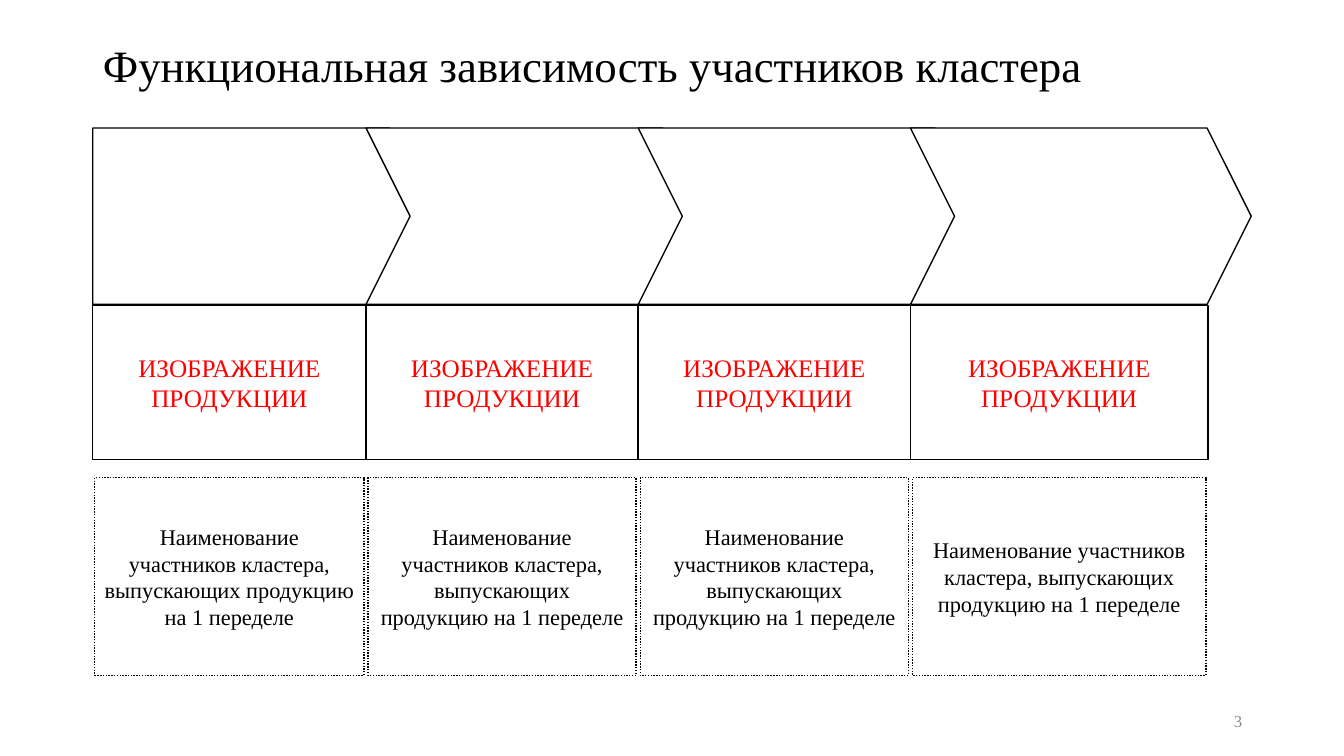
from itertools import pairwise

from pptx import Presentation
from pptx.dml.color import RGBColor
from pptx.enum.dml import MSO_LINE
from pptx.enum.shapes import MSO_SHAPE as Shape
from pptx.enum.text import MSO_ANCHOR as Anchor, MSO_AUTO_SIZE as AutoSize, PP_ALIGN as Align
from pptx.util import Inches, Pt

FONT = "Times New Roman"
BLACK, WHITE, RED, GRAY = "000000", "FFFFFF", "FF0000", "8C8C8C"
STAGE_EDGES = [0.92, 3.63, 6.33, 9.03, 11.98]
ARROW_WIDTH, ARROW_HEIGHT = 3.38, 1.75
GAP = 0.02
PRODUCT = "ИЗОБРАЖЕНИЕ ПРОДУКЦИИ"
MEMBERS = "Наименование участников кластера, выпускающих продукцию на 1 переделе"


def color(hex_value):
    return RGBColor.from_string(hex_value)


def write(holder, text, size, ink, align):
    frame = holder.text_frame
    frame.text = text
    frame.word_wrap = True
    frame.auto_size = AutoSize.NONE
    frame.vertical_anchor = Anchor.MIDDLE
    paragraph = frame.paragraphs[0]
    paragraph.alignment = align
    font = paragraph.runs[0].font
    font.name, font.size = FONT, Pt(size)
    font.color.rgb = color(ink)


def add_outlined(slide, kind, left, top, width, height, fill=None):
    outlined = slide.shapes.add_shape(
        kind, Inches(left), Inches(top), Inches(width), Inches(height))
    outlined.shadow.inherit = False
    if fill:
        outlined.fill.solid()
        outlined.fill.fore_color.rgb = color(fill)
    else:
        outlined.fill.background()
    outlined.line.color.rgb = color(BLACK)
    outlined.line.width = Pt(1)
    return outlined


def add_title(slide, text):
    title = slide.shapes.title
    title.left, title.top = Inches(0.92), Inches(0.4)
    title.width, title.height = Inches(11.5), Inches(0.55)
    write(title, text, 32, BLACK, Align.LEFT)
    title.text_frame.paragraphs[0].line_spacing = 0.9


def add_page_number(slide, number):
    page = slide.shapes.add_textbox(Inches(9.42), Inches(6.95), Inches(3), Inches(0.4))
    write(page, number, 12, GRAY, Align.RIGHT)


def add_arrow(slide, kind, left):
    arrow = add_outlined(slide, kind, left, 1.27, ARROW_WIDTH, ARROW_HEIGHT, WHITE)
    arrow.adjustments[0] = 0.25


def add_product(slide, left, width):
    product = add_outlined(slide, Shape.RECTANGLE, left, 3.03, width, 1.53)
    write(product, PRODUCT, 18, RED, Align.CENTER)


def add_members(slide, left, width):
    members = add_outlined(
        slide, Shape.RECTANGLE, left + GAP, 4.74, width - 2 * GAP, 1.96, WHITE)
    members.line.dash_style = MSO_LINE.ROUND_DOT
    write(members, MEMBERS, 16, BLACK, Align.CENTER)


def main():
    deck = Presentation()
    deck.slide_width, deck.slide_height = Inches(13.33), Inches(7.5)
    slide = deck.slides.add_slide(deck.slide_layouts[5])
    add_title(slide, "Функциональная зависимость участников кластера")
    add_page_number(slide, "3")
    for stage, (left, right) in enumerate(pairwise(STAGE_EDGES)):
        add_arrow(slide, Shape.CHEVRON if stage else Shape.PENTAGON, left)
        add_product(slide, left, right - left)
        add_members(slide, left, right - left)
    deck.save("out.pptx")


if __name__ == "__main__":
    main()
